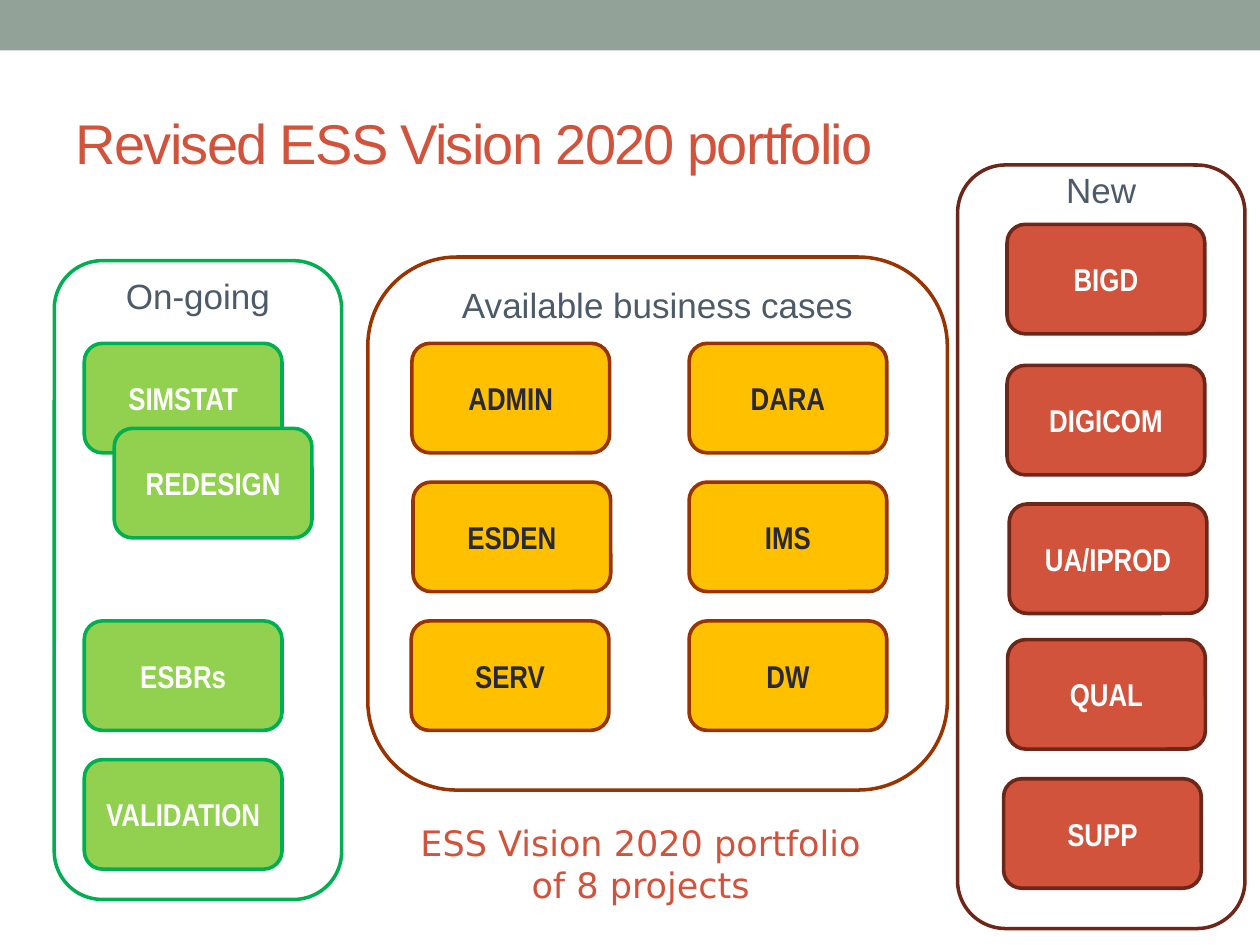
from pptx import Presentation
from pptx.dml.color import RGBColor
from pptx.enum.shapes import MSO_SHAPE as Shape
from pptx.enum.text import MSO_ANCHOR as Anchor, MSO_AUTO_SIZE as AutoSize, PP_ALIGN as Align
from pptx.util import Pt

COLOURS = {
    "bar": "93A299", "accent": "D2533C", "heading": "4C5A6A",
    "white": "FFFFFF", "dark": "292934",
    "green": "92D050", "green edge": "00B050",
    "amber": "FFC000", "amber edge": "993300",
    "red": "D2533C", "red edge": "6E2619",
}
TITLE = "Revised ESS Vision 2020 portfolio"
SUMMARY = "ESS Vision 2020 portfolio of 8 projects"

# Card size, and the four rows shared by the first two groups
CARD_W, CARD_H = 113, 62.6
ROWS = [196.2 + 79.3 * row for row in range(4)]

# Frames are left, top, width, height; projects are name, left, top
GROUPS = [
    dict(heading="New", frame=(547.2, 94.3, 164.2, 436.3), colour="red", ink="white",
         line_height=Pt(18),
         projects=[("BIGD", 575.5, 128.2), ("DIGICOM", 575.5, 208.8),
                   ("UA/IPROD", 576.7, 288), ("QUAL", 575.8, 365.5),
                   ("SUPP", 573.5, 445)]),
    dict(heading="On-going", frame=(31, 149, 164.2, 365), colour="green", ink="white",
         line_height=1.0,
         projects=[("SIMSTAT", 48.2, ROWS[0]), ("REDESIGN", 65.3, 244.8),
                   ("ESBRs", 48.2, ROWS[2]), ("VALIDATION", 48.2, ROWS[3])]),
    dict(heading="Available business cases", frame=(210.2, 146.9, 331.2, 304.6),
         colour="amber", ink="dark", line_height=1.0,
         projects=[("ADMIN", 235.4, ROWS[0]), ("DARA", 393.8, ROWS[0]),
                   ("ESDEN", 236, ROWS[1]), ("IMS", 393.8, ROWS[1]),
                   ("SERV", 235, ROWS[2]), ("DW", 393.8, ROWS[2])]),
]


def rgb(name):
    return RGBColor.from_string(COLOURS[name])


def write(frame, text, size, font, colour, bold=False, align=Align.CENTER):
    frame.word_wrap = True
    paragraph = frame.paragraphs[0]
    paragraph.text = text
    paragraph.alignment = align
    paragraph.font.size = Pt(size)
    paragraph.font.name = font
    paragraph.font.bold = bold
    paragraph.font.color.rgb = rgb(colour)
    return paragraph


def add_box(slide, kind, box, fill=None, edge=None, edge_width=2):
    shape = slide.shapes.add_shape(kind, *map(Pt, box))
    shape.shadow.inherit = False
    if fill:
        shape.fill.solid()
        shape.fill.fore_color.rgb = rgb(fill)
    else:
        shape.fill.background()
    if edge:
        shape.line.color.rgb = rgb(edge)
        shape.line.width = Pt(edge_width)
    else:
        shape.line.fill.background()
    return shape


def add_group(slide, group):
    colour, edge = group["colour"], group["colour"] + " edge"
    # Outline with its heading at the top
    outline = add_box(slide, Shape.ROUNDED_RECTANGLE, group["frame"], edge=edge)
    frame = outline.text_frame
    frame.vertical_anchor = Anchor.TOP
    frame.margin_top = 0
    heading = write(frame, group["heading"], 20, "Arial", "heading")
    heading.line_spacing = group["line_height"]
    # Project cards
    for name, left, top in group["projects"]:
        card = add_box(slide, Shape.ROUNDED_RECTANGLE, (left, top, CARD_W, CARD_H),
                       colour, edge, 2.08)
        card.text_frame.vertical_anchor = Anchor.MIDDLE
        write(card.text_frame, name, 18, "Arial Narrow", group["ink"], bold=True)


def main():
    deck = Presentation()
    deck.slide_width, deck.slide_height = Pt(720), Pt(540)
    slide = deck.slides.add_slide(deck.slide_layouts[5])

    # Top bar
    add_box(slide, Shape.RECTANGLE, (0, 0, 720, 28.8), fill="bar")

    # Title with tightened letters
    title = slide.shapes.title
    title.left, title.top, title.width, title.height = map(Pt, (36, 42, 648, 78))
    title.text_frame.vertical_anchor = Anchor.MIDDLE
    line = write(title.text_frame, TITLE, 32, "Arial", "accent", align=Align.LEFT)
    line.runs[0]._r.get_or_add_rPr().set("spc", "-100")

    for group in GROUPS:
        add_group(slide, group)

    # Summary below the business cases
    summary = slide.shapes.add_textbox(*map(Pt, (229.7, 465.8, 272.9, 55.4)))
    summary.text_frame.auto_size = AutoSize.SHAPE_TO_FIT_TEXT
    write(summary.text_frame, SUMMARY, 20, "DejaVu Sans", "accent")

    deck.save("out.pptx")


if __name__ == "__main__":
    main()
